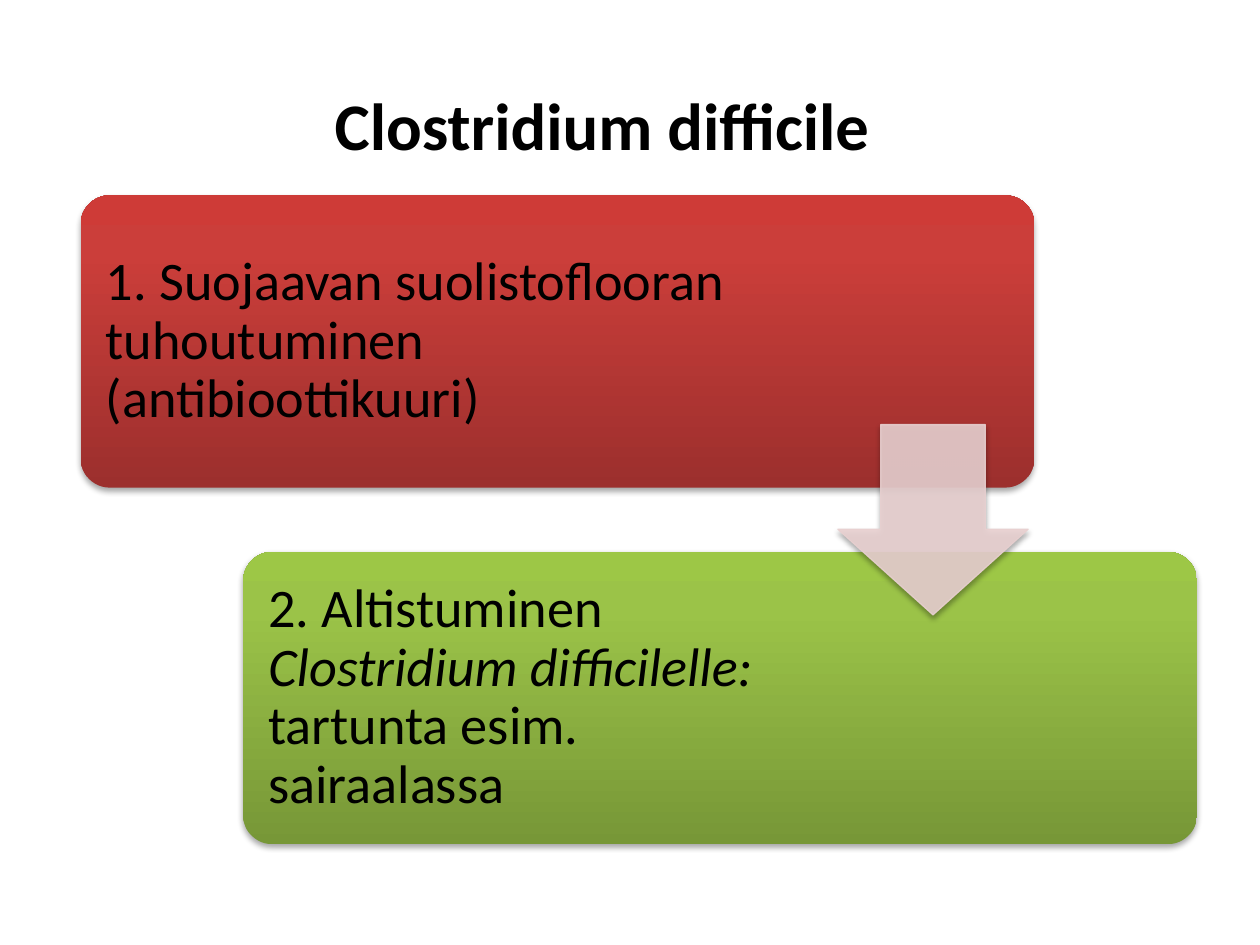
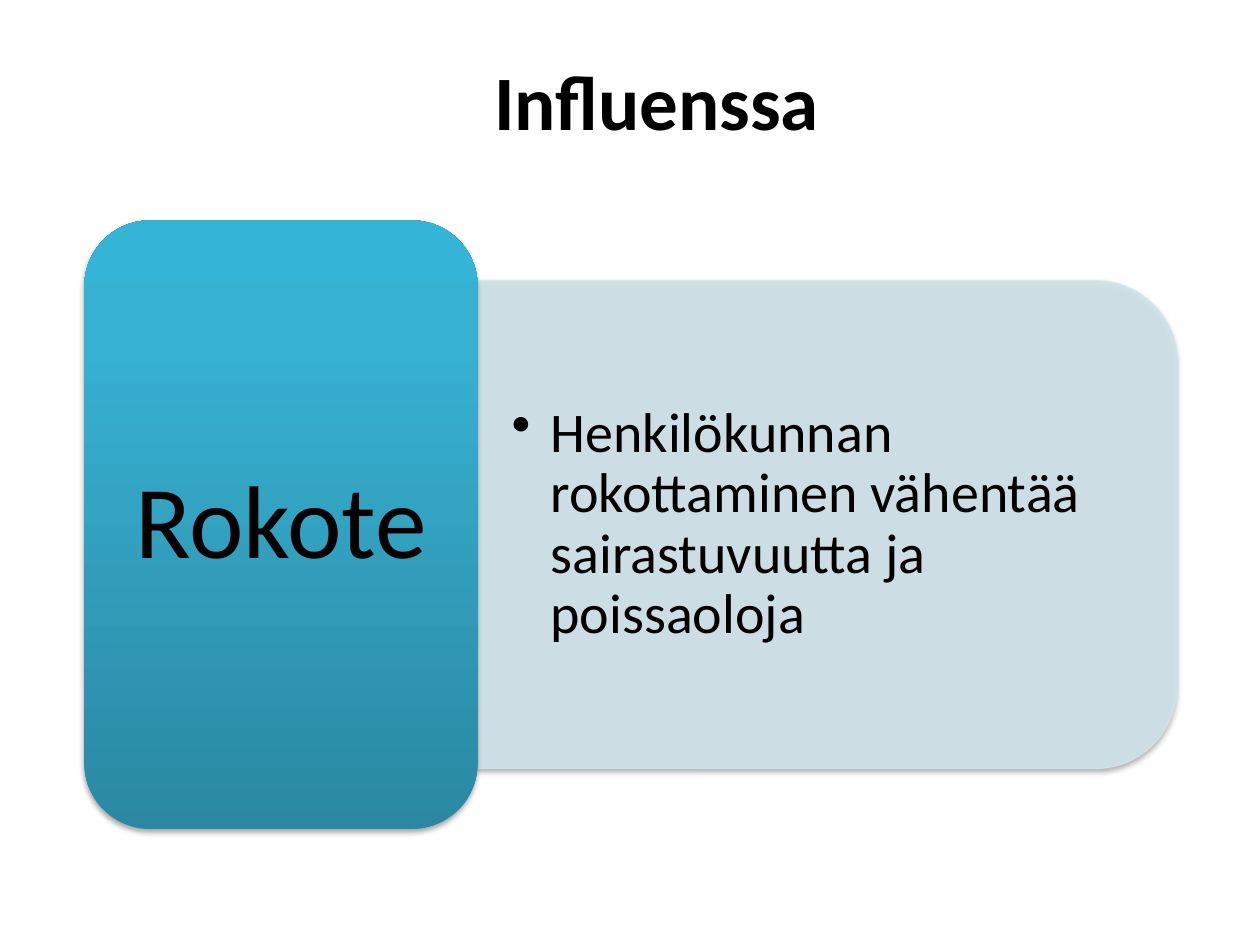
"""Build two slides on Clostridium difficile and influenza vaccination."""
from copy import deepcopy

from lxml import etree
from pptx import Presentation
from pptx.dml.color import RGBColor
from pptx.enum.shapes import MSO_SHAPE as Shape
from pptx.enum.text import MSO_ANCHOR as Anchor, PP_ALIGN as Align
from pptx.oxml.ns import qn
from pptx.util import Inches, Pt

FONT = "Calibri"
INK = "000000"
RED = ("9C2F2D", "CB3E3A", "CE3B37")
GREEN = ("779737", "9BC348", "9DC746")
BLUE = ("2A88A2", "37B1D2", "34B4D6")
PALE_RED = "E8D0D0"
PALE_BLUE = "D0E3EA"


def add_panel(page, kind, place, colours, adjustments=(), rotation=0):
    """Add a shadowed shape: three colours make a gradient, one a pale tint."""
    panel = page.shapes.add_shape(kind, *map(Inches, place))
    panel.rotation = rotation
    for index, value in enumerate(adjustments):
        panel.adjustments[index] = value
    properties = panel._element.spPr
    if len(colours) == 3:
        panel.fill.gradient()
        panel.fill.gradient_angle = 90
        stop_list = properties.find(qn("a:gradFill")).find(qn("a:gsLst"))
        stop_list.append(deepcopy(stop_list[-1]))
        for stop, position, colour in zip(panel.fill.gradient_stops, (0, 0.8, 1), colours):
            stop.position = position
            stop.color.rgb = RGBColor.from_string(colour)
        panel.line.fill.background()
    else:
        panel.line.width = Pt(0.75)
        for fill in (panel.fill, panel.line.fill):
            fill.solid()
            fill.fore_color.rgb = RGBColor.from_string(colours[0])
        for tint in properties.iter(qn("a:srgbClr")):
            etree.SubElement(tint, qn("a:alpha"), val="90000")
    panel.shadow.inherit = False
    shadow = etree.SubElement(properties.find(qn("a:effectLst")), qn("a:outerShdw"),
                              blurRad=str(Pt(3.1)), dist=str(Pt(1.8)),
                              dir="5400000", rotWithShape="0")
    black = etree.SubElement(shadow, qn("a:srgbClr"), val=INK)
    etree.SubElement(black, qn("a:alpha"), val="35000")


def write(box, runs, size, align=Align.LEFT, bold=False, insets=(0.1, 0.05), spacing=None):
    """Fill a box with one paragraph of (text, italic) runs."""
    frame = box.text_frame
    frame.word_wrap = True
    frame.vertical_anchor = Anchor.MIDDLE
    frame.margin_left = frame.margin_right = Inches(insets[0])
    frame.margin_top = frame.margin_bottom = Inches(insets[1])
    para = frame.paragraphs[0]
    para.alignment = align
    para.line_spacing = spacing
    for text, italic in runs:
        span = para.add_run()
        span.text = text
        look = {"name": FONT, "size": Pt(size), "bold": bold, "italic": italic}
        for name, value in look.items():
            setattr(span.font, name, value)
        span.font.color.rgb = RGBColor.from_string(INK)
    return para


deck = Presentation()
deck.slide_width, deck.slide_height = Inches(10), Inches(7.5)

titles = [
    ("Clostridium difficile", (0.28, 0.36, 9, 1.25), 38),
    ("Influenssa", (0.83, 0.29, 8.77, 1), 44),
]
pages = []
for text, place, size in titles:
    page = deck.slides.add_slide(deck.slide_layouts[5])
    title = page.shapes.title
    title.left, title.top, title.width, title.height = map(Inches, place)
    write(title, [(text, False)], size, Align.CENTER, bold=True)
    pages.append(page)
infection, vaccine = pages

steps = [
    (RED, 5.17, [("1. Suojaavan suolistoflooran tuhoutuminen (antibioottikuuri)", False)]),
    (GREEN, 4.59, [("2. Altistuminen ", False), ("Clostridium difficilelle: ", True),
                   ("tartunta esim. sairaalassa", False)]),
]
for index, (colours, text_width, runs) in enumerate(steps):
    left, top = 0.64 + 1.29 * index, 1.55 + 2.83 * index
    add_panel(infection, Shape.ROUNDED_RECTANGLE, (left, top, 7.57, 2.32), colours, [0.1])
    box = infection.shapes.add_textbox(
        *map(Inches, (left + 0.07, top + 0.07, text_width, 2.18)))
    write(box, runs, 31, insets=(0.13, 0.13), spacing=0.9)
add_panel(infection, Shape.DOWN_ARROW, (6.65, 3.37, 1.51, 1.51), [PALE_RED], [0.55, 0.45])

add_panel(vaccine, Shape.ROUND_2_SAME_RECTANGLE, (4.63, 1.39, 3.87, 5.55), [PALE_BLUE],
          rotation=90)
benefit = vaccine.shapes.add_textbox(*map(Inches, (3.79, 2.42, 5.36, 3.49)))
para = write(benefit,
             [("Henkilökunnan rokottaminen vähentää sairastuvuutta ja poissaoloja", False)],
             32, insets=(0.27, 0.14), spacing=0.9)
bullet_format = para._p.get_or_add_pPr()
bullet_format.set("marL", str(Inches(0.31)))
bullet_format.set("indent", str(-Inches(0.31)))
etree.SubElement(bullet_format, qn("a:buChar"), char="•")

add_panel(vaccine, Shape.ROUNDED_RECTANGLE, (0.67, 1.75, 3.12, 4.83), BLUE)
label = vaccine.shapes.add_textbox(*map(Inches, (0.82, 1.9, 2.82, 4.53)))
write(label, [("Rokote", False)], 59, Align.CENTER, insets=(0.25, 0.12), spacing=0.9)

deck.save("out.pptx")
